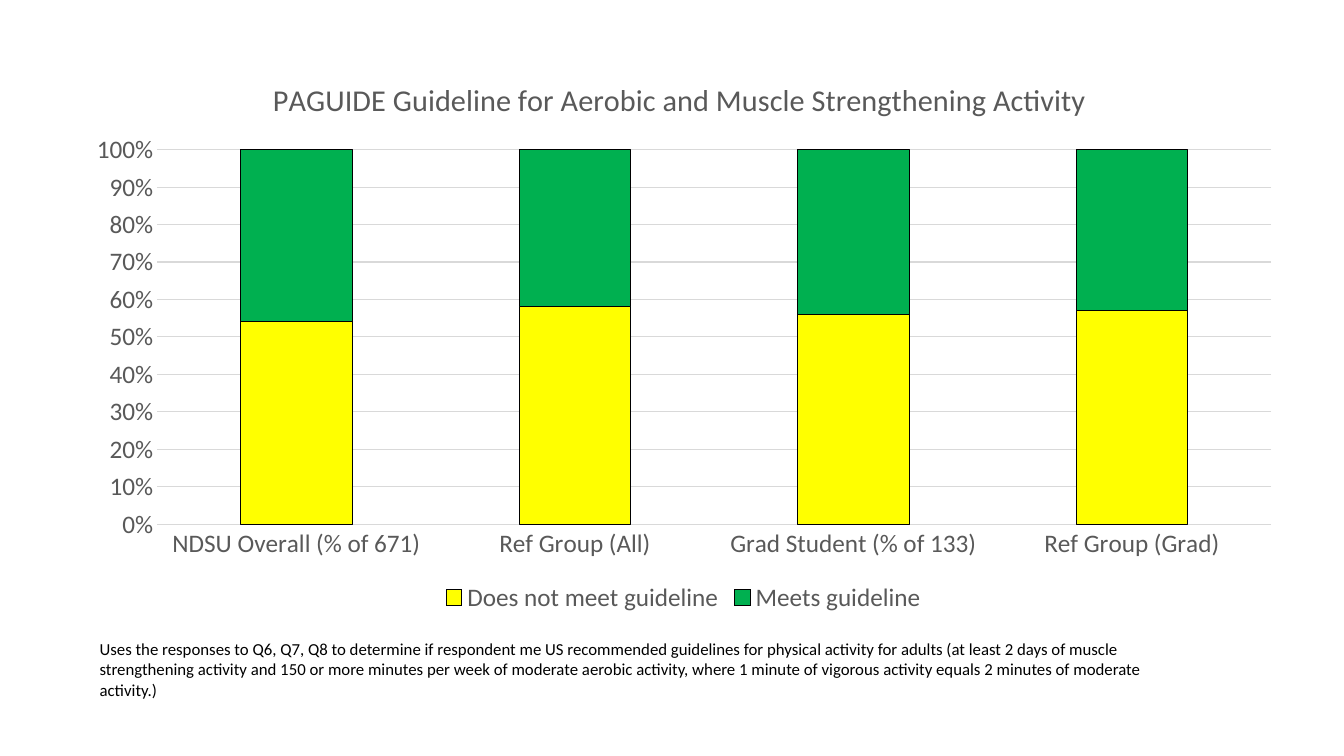
"""Build a slide comparing physical activity guideline results across four groups."""
import pptx
import pptx.chart.data
import pptx.dml.color
import pptx.enum.chart
import pptx.enum.text
import pptx.oxml
import pptx.oxml.ns
import pptx.util
from pptx.util import Inches

TITLE = "PAGUIDE Guideline for Aerobic and Muscle Strengthening Activity"
GROUPS = ["NDSU Overall (% of 671)", "Ref Group (All)", "Grad Student (% of 133)", "Ref Group (Grad)"]
SERIES = [
    ("Does not meet guideline", [54, 58, 56, 57], "FFFF00"),
    ("Meets guideline", [46, 42, 44, 43], "00B050"),
]
NOTE = (
    "Uses the responses to Q6, Q7, Q8 to determine if respondent me US recommended guidelines "
    "for physical activity for adults (at least 2 days of muscle strengthening activity and 150 "
    "or more minutes per week of moderate aerobic activity, where 1 minute of vigorous activity "
    "equals 2 minutes of moderate activity.)"
)
FONT, GRAY, GRID, BLACK = "Calibri", "595959", "D9D9D9", "000000"
CHART_BOX = (0.71, 0.5, 12.14, 5.63)
NOTE_BOX = (0.89, 6.29, 10.66, 0.71)
TITLE_LAYOUT = {"x": 0.16, "y": 0.04}
PLOT_LAYOUT = {"x": 0.07, "y": 0.175, "w": 0.91, "h": 0.66}


def color(value):
    return pptx.dml.color.RGBColor.from_string(value)


def style_font(font, size, value):
    font.name, font.size, font.bold = FONT, pptx.util.Pt(size), False
    font.color.rgb = color(value)


def style_line(line, value):
    line.color.rgb = color(value)
    line.width = pptx.util.Pt(0.75)


def write_text(frame, text, size=18, value=BLACK):
    run = frame.paragraphs[0].add_run()
    run.text = text
    style_font(run.font, size, value)


def place_part(element, fractions, inner=False):
    for layout in element.findall(pptx.oxml.ns.qn("c:layout")):
        element.remove(layout)
    target = '<c:layoutTarget val="inner"/>' if inner else ""
    modes = "".join(f'<c:{key}Mode val="edge"/>' for key in "xy")
    sizes = "".join(f'<c:{key} val="{value}"/>' for key, value in fractions.items())
    layout = pptx.oxml.parse_xml(
        f'<c:layout {pptx.oxml.ns.nsdecls("c")}><c:manualLayout>'
        f"{target}{modes}{sizes}</c:manualLayout></c:layout>"
    )
    text = element.find(pptx.oxml.ns.qn("c:tx"))
    element.insert(0 if text is None else 1, layout)


def add_guideline_chart(slide):
    data = pptx.chart.data.CategoryChartData()
    data.categories = GROUPS
    for name, values, _ in SERIES:
        data.add_series(name, values)
    kind = pptx.enum.chart.XL_CHART_TYPE.COLUMN_STACKED_100
    chart = slide.shapes.add_chart(kind, *map(Inches, CHART_BOX), data).chart
    style_font(chart.font, 18, BLACK)

    chart.has_title = True
    write_text(chart.chart_title.text_frame, TITLE, size=21.6, value=GRAY)
    chart.chart_title.include_in_layout = False
    place_part(chart.chart_title._element, TITLE_LAYOUT)
    place_part(chart._chartSpace.chart.plotArea, PLOT_LAYOUT, inner=True)

    chart.has_legend = True
    chart.legend.position = pptx.enum.chart.XL_LEGEND_POSITION.BOTTOM
    chart.legend.include_in_layout = False
    style_font(chart.legend.font, 18, GRAY)

    plot = chart.plots[0]
    plot.gap_width, plot.overlap, plot.vary_by_categories = 150, 100, False
    for series, (_, _, fill) in zip(plot.series, SERIES):
        series.format.fill.solid()
        series.format.fill.fore_color.rgb = color(fill)
        style_line(series.format.line, BLACK)

    for axis in (chart.category_axis, chart.value_axis):
        axis.major_tick_mark = axis.minor_tick_mark = pptx.enum.chart.XL_TICK_MARK.NONE
        style_font(axis.tick_labels.font, 18, GRAY)
    style_line(chart.category_axis.format.line, GRID)
    values = chart.value_axis
    values.format.line.fill.background()
    values.minimum_scale, values.maximum_scale, values.major_unit = 0, 1, 0.1
    values.tick_labels.number_format = "0%"
    values.tick_labels.number_format_is_linked = False
    style_line(values.major_gridlines.format.line, GRID)


def main():
    presentation = pptx.Presentation()
    presentation.slide_width, presentation.slide_height = Inches(13.33), Inches(7.5)
    slide = presentation.slides.add_slide(presentation.slide_layouts[6])
    add_guideline_chart(slide)
    frame = slide.shapes.add_textbox(*map(Inches, NOTE_BOX)).text_frame
    frame.word_wrap = True
    frame.auto_size = pptx.enum.text.MSO_AUTO_SIZE.SHAPE_TO_FIT_TEXT
    write_text(frame, NOTE, size=12)
    presentation.save("out.pptx")


if __name__ == "__main__":
    main()
